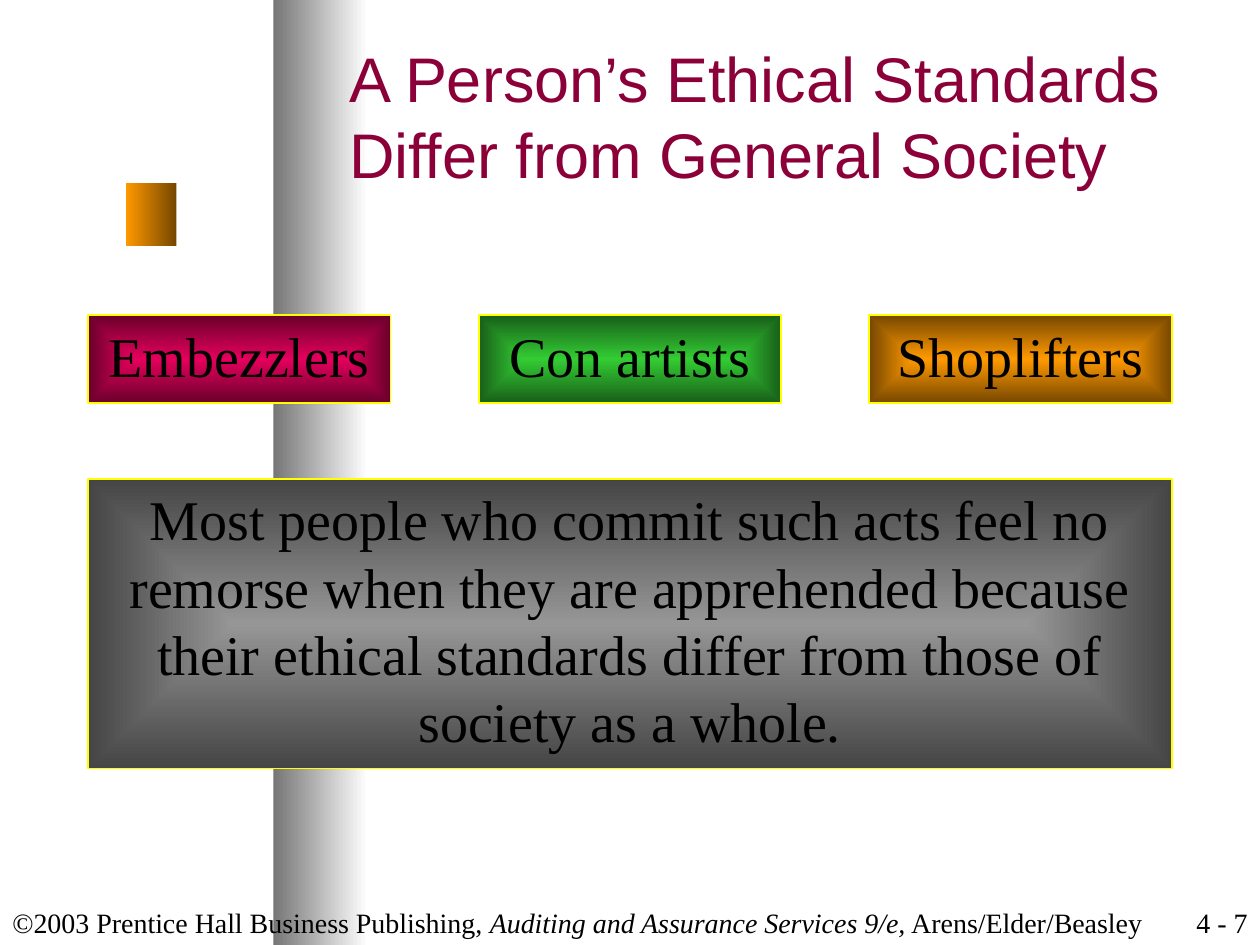
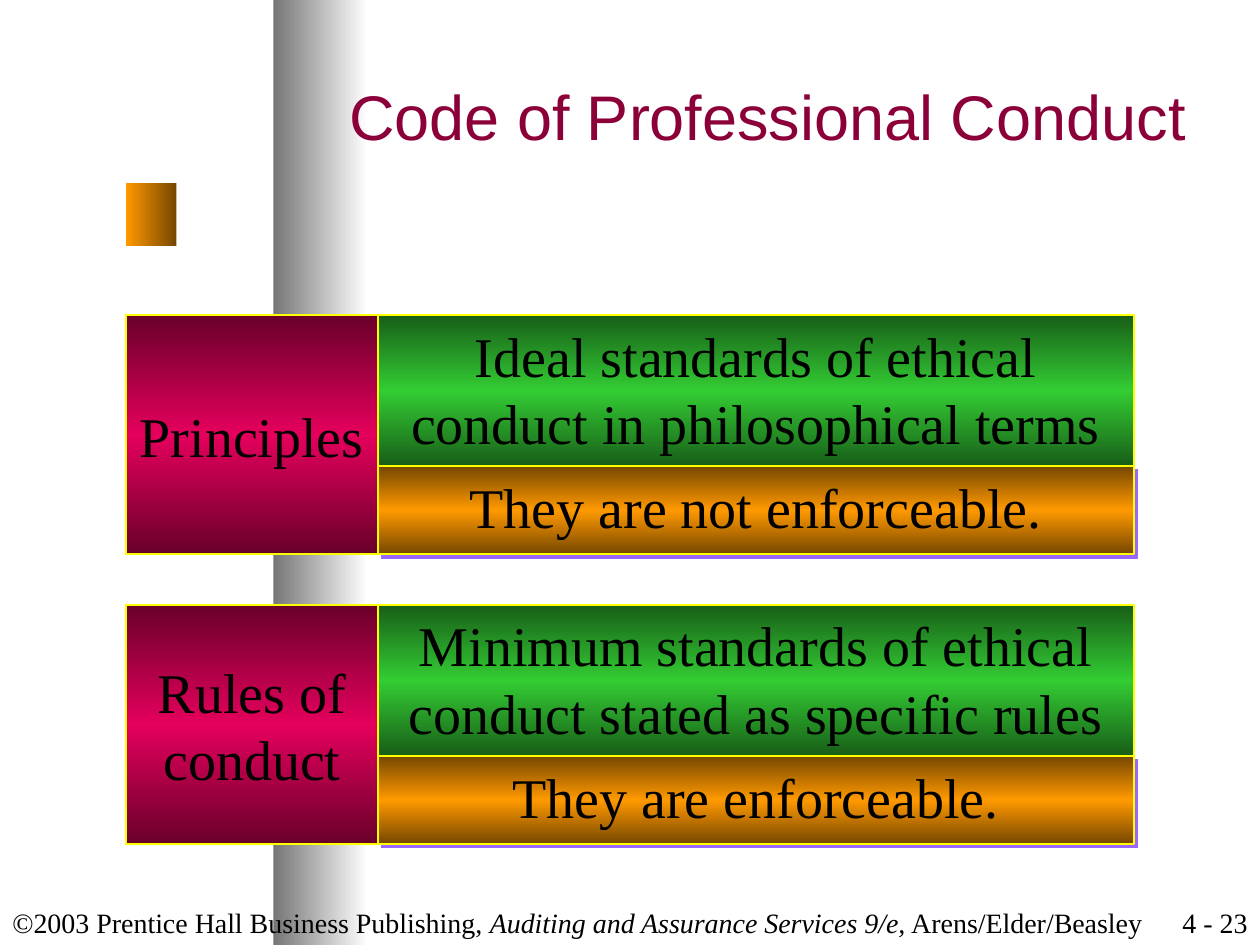
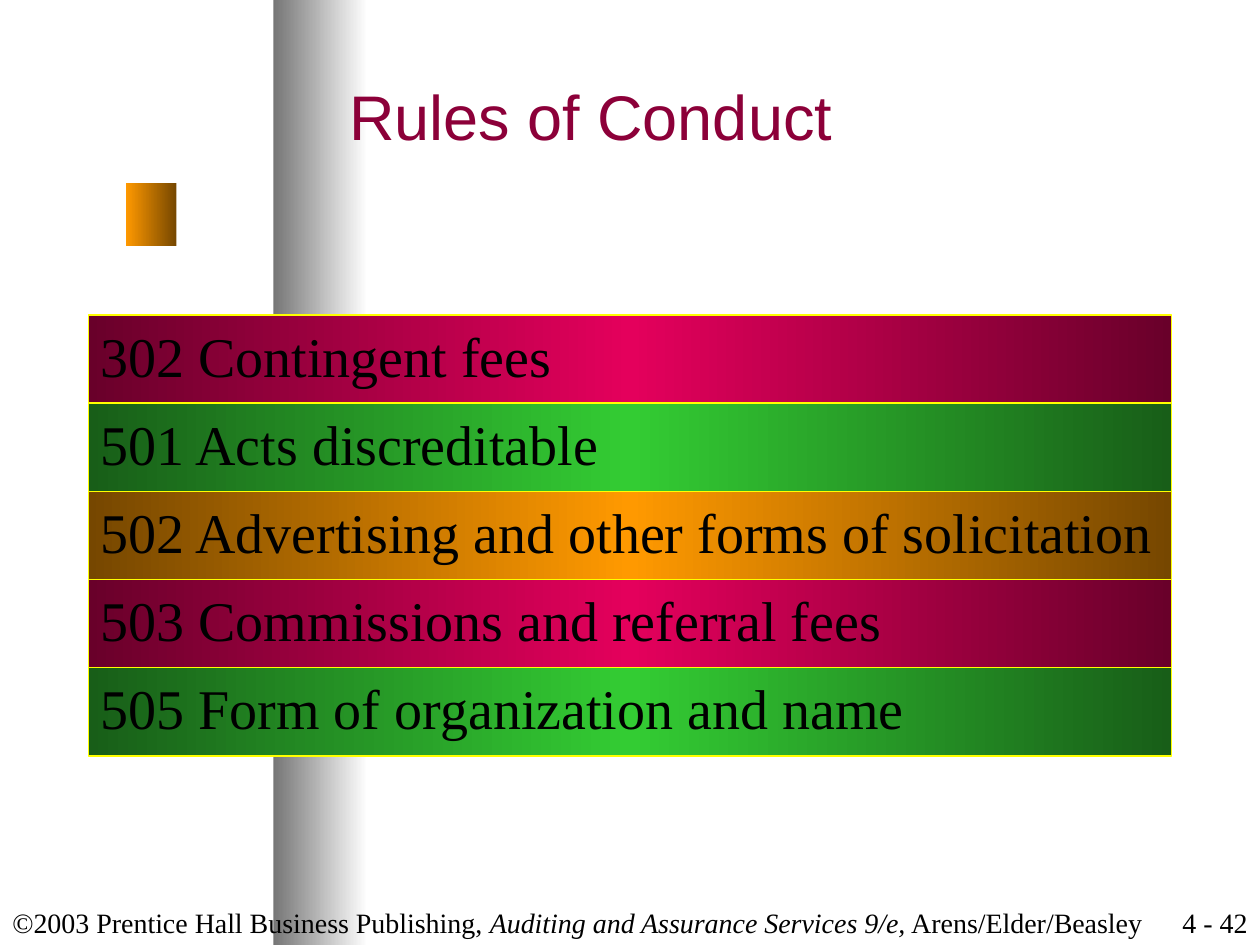
import pptx
import pptx.util
import pptx.dml.color
import pptx.enum.shapes
import pptx.enum.text
import pptx.oxml
import pptx.oxml.ns
import lxml.etree

Inches, Pt = pptx.util.Inches, pptx.util.Pt
ALIGN = pptx.enum.text.PP_ALIGN
ANCHOR = pptx.enum.text.MSO_ANCHOR
RECT = pptx.enum.shapes.MSO_SHAPE.RECTANGLE

# Each pair is the bright colour and its dark shade
RED = ("E4005C", "69002A")
GREEN = ("33CC33", "185E18")
ORANGE = ("FF9900", "764700")
GREY = ("969696", "454545")
BAND = ("767676", "FFFFFF")
BLACK, YELLOW, VIOLET, WINE = "000000", "FFFF00", "9966FF", "8C0039"
SERIF, SANS = "Times New Roman", "Arial"


def rgb(hex_colour):
    return pptx.dml.color.RGBColor.from_string(hex_colour)


class Deck:
    def __init__(self):
        self.prs = pptx.Presentation()
        self.prs.slide_width, self.prs.slide_height = Inches(10), Inches(7.5)
        self.s = None

    def slide(self, title, number):
        self.s = self.prs.slides.add_slide(self.prs.slide_layouts[5])
        # Side band and marker
        self.box(2.17, 0, 0.75, 7.5, BAND, angle=0, line=None)
        self.box(1, 1.45, 0.4, 0.5, ORANGE, angle=0, line=None)
        # Footer and page number
        self.label(0, 9.2, [("©2003 Prentice Hall Business Publishing, ", False),
                            ("Auditing and Assurance Services 9/e,", True),
                            (" Arens/Elder/Beasley", False)])
        self.label(9, 1, [(f"4 - {number}", False)], ALIGN.RIGHT, wrap=True)
        self.title(title)

    def title(self, text):
        sp = self.s.shapes.title
        sp.left, sp.top, sp.width, sp.height = map(Inches, (2.67, 0.25, 7, 1.33))
        sp.element.getparent().append(sp.element)  # bring in front of the band
        tf = sp.text_frame
        tf.text = text
        tf.word_wrap = True
        tf.auto_size = pptx.enum.text.MSO_AUTO_SIZE.NONE
        tf.vertical_anchor = ANCHOR.MIDDLE
        self.style(tf.paragraphs[0], 36, SANS, WINE, ALIGN.LEFT)

    def style(self, p, size, font, colour, align):
        p.alignment = align
        p.font.size, p.font.name = Pt(size), font
        p.font.color.rgb = rgb(colour)

    def label(self, left, width, runs, align=ALIGN.LEFT, wrap=False):
        sp = self.s.shapes.add_textbox(Inches(left), Inches(7), Inches(width), Inches(0.5))
        tf = sp.text_frame
        tf.word_wrap, tf.vertical_anchor = wrap, ANCHOR.BOTTOM
        p = tf.paragraphs[0]
        for text, italic in runs:
            r = p.add_run()
            r.text, r.font.italic = text, italic
        self.style(p, 16, SERIF, BLACK, align)

    def gradient(self, sp, colours, angle):
        """Fill along an angle, or from the centre outwards when angle is None."""
        last = len(colours) - 1
        stops = "".join(f'<a:gs pos="{i * 100000 // last}"><a:srgbClr val="{c}"/></a:gs>'
                        for i, c in enumerate(colours))
        if angle is None:
            way = '<a:path path="rect"><a:fillToRect l="50000" t="50000" r="50000" b="50000"/></a:path>'
        else:
            way = f'<a:lin ang="{angle * 60000}" scaled="0"/>'
        sp.fill.background()
        spPr = sp.element.spPr
        spPr.replace(spPr.find(pptx.oxml.ns.qn("a:noFill")), pptx.oxml.parse_xml(
            f'<a:gradFill {pptx.oxml.ns.nsdecls("a")} rotWithShape="1">'
            f'<a:gsLst>{stops}</a:gsLst>{way}</a:gradFill>'))

    def box(self, left, top, width, height, colours, text="", angle=None, line=1,
            align=ALIGN.CENTER, anchor=ANCHOR.TOP, shadow=False):
        sp = self.s.shapes.add_shape(RECT, Inches(left), Inches(top), Inches(width), Inches(height))
        self.gradient(sp, colours, angle)
        if line:
            sp.line.color.rgb, sp.line.width = rgb(YELLOW), Pt(line)
        else:
            sp.line.fill.background()
        sp.shadow.inherit = False
        if shadow:
            effects = sp.element.spPr.find(pptx.oxml.ns.qn("a:effectLst"))
            effects.append(pptx.oxml.parse_xml(
                f'<a:outerShdw {pptx.oxml.ns.nsdecls("a")} dist="{Pt(2.8)}" dir="2700000" '
                f'algn="ctr" rotWithShape="0"><a:srgbClr val="{VIOLET}"/></a:outerShdw>'))
        if text:
            tf = sp.text_frame
            tf.text = text
            tf.word_wrap, tf.vertical_anchor = False, anchor
            for p in tf.paragraphs:
                self.style(p, 32, SERIF, BLACK, align)


def mirrored(colours):
    bright, dark = colours
    return dark, bright, dark


def main():
    deck = Deck()

    # Ethical standards: three offenders above one statement
    deck.slide("A Person’s Ethical Standards\vDiffer from General Society", 7)
    offenders = [("Embezzlers", RED), ("Con artists", GREEN), ("Shoplifters", ORANGE)]
    for i, (text, colours) in enumerate(offenders):
        deck.box(0.7 + 3.1 * i, 2.5, 2.4, 0.7, colours, text)
    deck.box(0.7, 3.8, 8.6, 2.3, GREY,
             "Most people who commit such acts feel no\n"
             "remorse when they are apprehended because\n"
             "their ethical standards differ from those of\n"
             "society as a whole.")

    # Code: each part with its meaning and its force
    deck.slide("Code of Professional Conduct", 23)
    parts = [("Principles", "Ideal standards of ethical\nconduct in philosophical terms",
              "They are not enforceable."),
             ("Rules of\nconduct", "Minimum standards of ethical\nconduct stated as specific rules",
              "They are enforceable.")]
    for i, (name, meaning, force) in enumerate(parts):
        top = 2.5 + 2.3 * i
        deck.box(1, top, 2, 1.9, mirrored(RED), name, angle=90, anchor=ANCHOR.MIDDLE)
        deck.box(3, top, 6, 1.2, mirrored(GREEN), meaning, angle=90)
        deck.box(3, top + 1.2, 6, 0.7, mirrored(ORANGE), force, angle=90, shadow=True)

    # Rules: stacked rows in cycling colours
    deck.slide("Rules of Conduct", 42)
    rules = ["302 Contingent fees", "501 Acts discreditable",
             "502 Advertising and other forms of solicitation",
             "503 Commissions and referral fees", "505 Form of organization and name"]
    cycle = (RED, GREEN, ORANGE)
    for i, rule in enumerate(rules):
        deck.box(0.7, 2.5 + 0.7 * i, 8.6, 0.7, mirrored(cycle[i % 3]), rule,
                 angle=0, line=0.75, align=ALIGN.LEFT)

    deck.prs.save("out.pptx")


if __name__ == "__main__":
    main()
